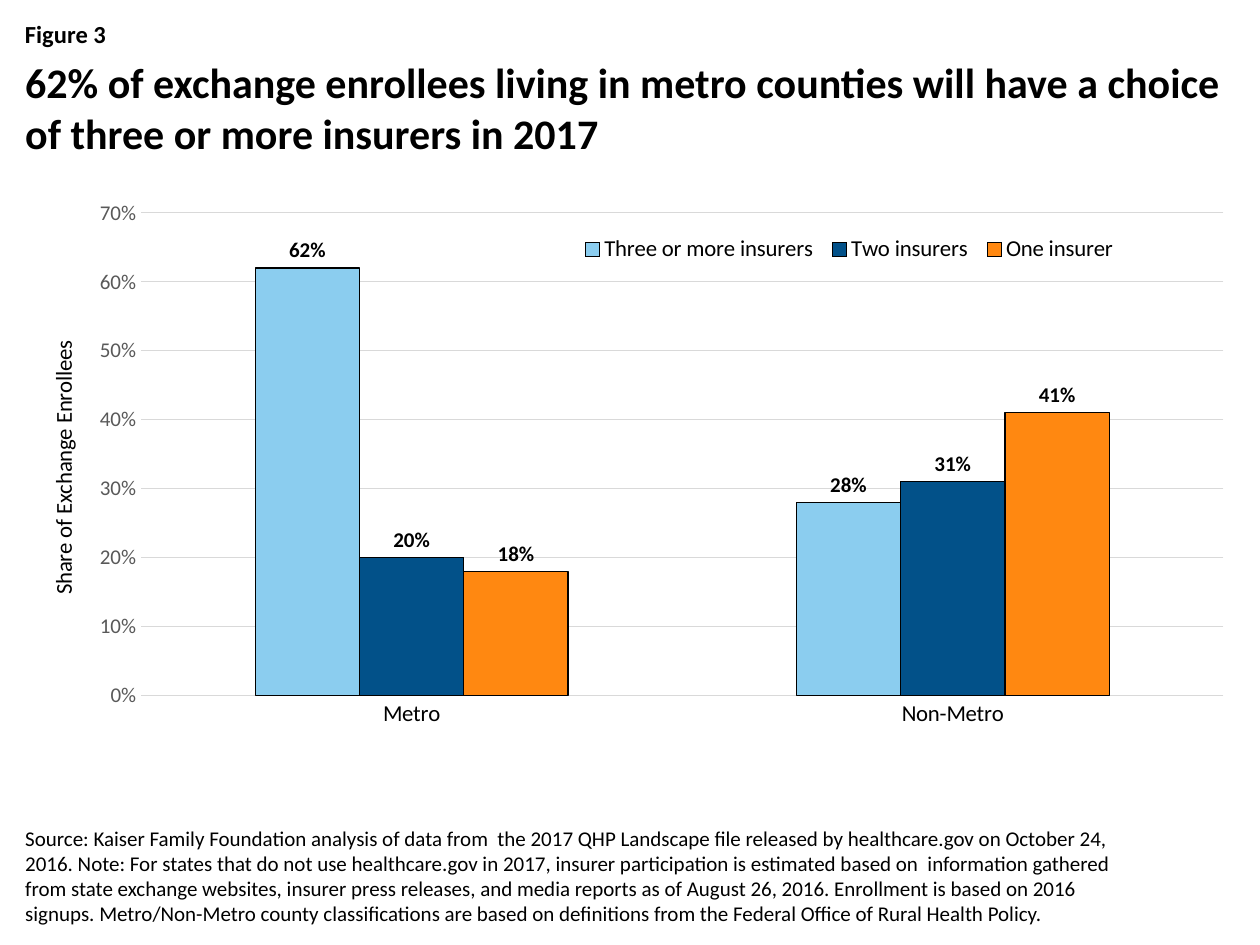
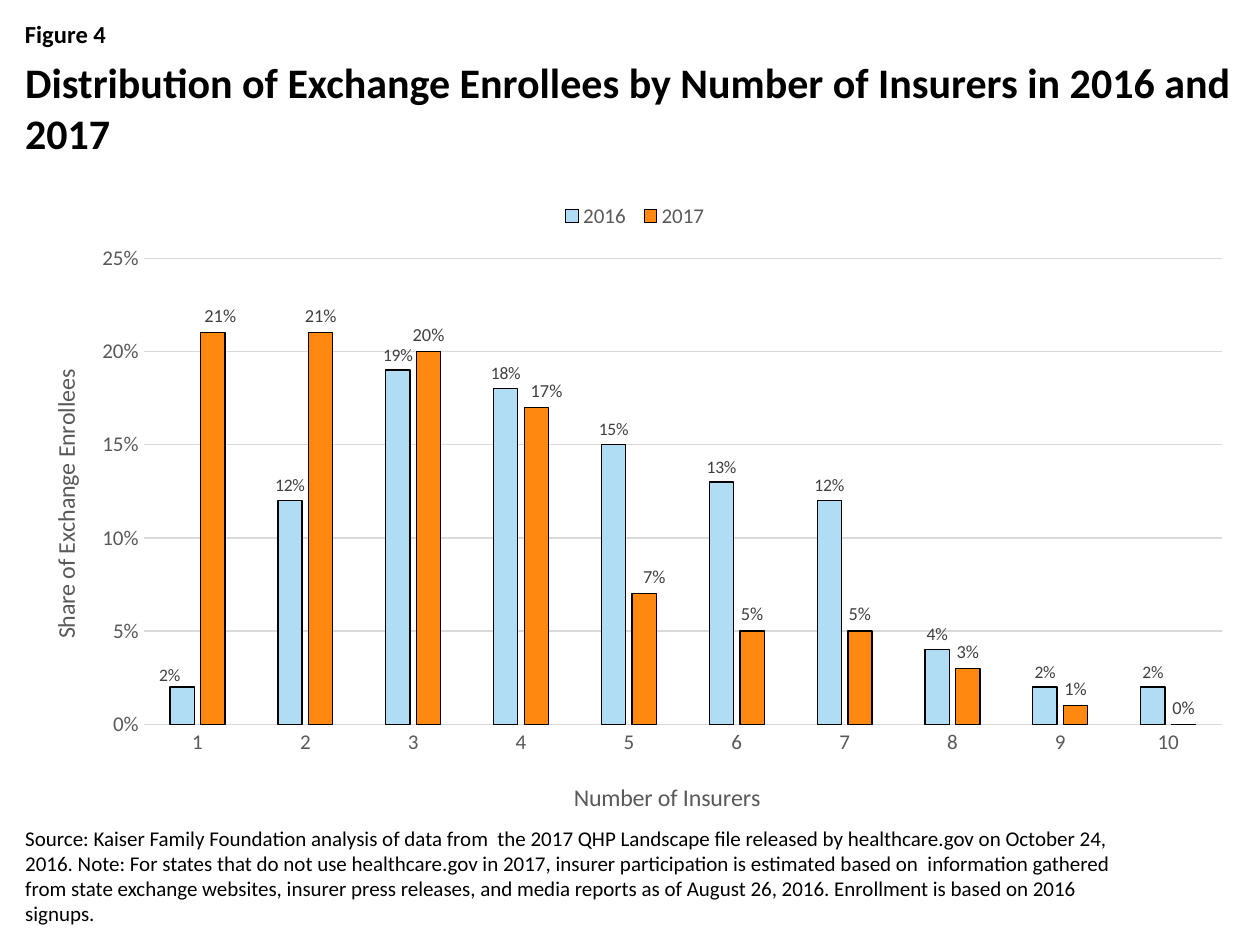
from collections import namedtuple

from lxml.etree import SubElement
from pptx import Presentation
from pptx.chart.data import CategoryChartData
from pptx.dml.color import RGBColor
from pptx.enum.chart import XL_CHART_TYPE, XL_LABEL_POSITION, XL_LEGEND_POSITION, XL_TICK_MARK
from pptx.enum.text import MSO_ANCHOR, MSO_AUTO_SIZE, PP_ALIGN
from pptx.oxml.ns import qn
from pptx.util import Pt

EMU_PER_PX = 9144  # 100 px to the inch
FONT = "Calibri"
BLACK = RGBColor(0x00, 0x00, 0x00)
GRAY = RGBColor(0x59, 0x59, 0x59)
DARK_GRAY = RGBColor(0x40, 0x40, 0x40)
GRID_GRAY = RGBColor(0xD9, 0xD9, 0xD9)
SKY = RGBColor(0x8B, 0xCD, 0xEF)
PALE_SKY = RGBColor(0xB0, 0xDD, 0xF4)
NAVY = RGBColor(0x02, 0x51, 0x89)
ORANGE = RGBColor(0xFF, 0x88, 0x11)

SLIDE_SIZE = (1000, 750)
FIGURE_BOX = (10, 10, 980, 34)
TITLE_BOX = (10, 40, 980, 100)
SOURCE_BOX = (10, 680, 910, 60)

SOURCE = (
    "Source: Kaiser Family Foundation analysis of data from  the 2017 QHP Landscape file "
    "released by healthcare.gov on October 24, 2016. Note: For states that do not use "
    "healthcare.gov in 2017, insurer participation is estimated based on  information "
    "gathered from state exchange websites, insurer press releases, and media reports as of "
    "August 26, 2016. Enrollment is based on 2016 signups."
)
METRO_NOTE = (
    " Metro/Non-Metro county classifications are based on definitions from the Federal "
    "Office of Rural Health Policy."
)

# label_shifts maps a point's index to the (x, y) offset of its label in px
Series = namedtuple("Series", "name values color label_size label_color label_bold label_shifts")
AxisTitle = namedtuple("AxisTitle", "text left top size color")


def px(length):
    return round(length * EMU_PER_PX)


def place(shape, box):
    shape.left, shape.top, shape.width, shape.height = map(px, box)


def style_font(font, size, color, bold=False):
    font.name = FONT
    font.size = Pt(size)
    font.bold = bold
    font.color.rgb = color


def fill_text(shape, box, text, size, bold=False, anchor=MSO_ANCHOR.TOP):
    place(shape, box)
    frame = shape.text_frame
    frame.word_wrap = True
    frame.auto_size = MSO_AUTO_SIZE.NONE
    frame.vertical_anchor = anchor
    frame.text = text
    paragraph = frame.paragraphs[0]
    paragraph.alignment = PP_ALIGN.LEFT
    paragraph.space_before = Pt(0)
    properties = paragraph._p.get_or_add_pPr()
    properties.set("marL", "0")
    properties.set("indent", "0")
    SubElement(properties, qn("a:buNone"))
    style_font(paragraph.font, size, BLACK, bold)


def set_layout(element, chart_size, box, inner=False, offset=False):
    """Fix a chart part at box, in px from the chart's corner (or from its usual place)."""
    for old in element.findall(qn("c:layout")):
        element.remove(old)
    leading = {qn(tag) for tag in ("c:idx", "c:legendPos", "c:legendEntry", "c:tx")}
    layout = element.makeelement(qn("c:layout"))
    element.insert(sum(child.tag in leading for child in element), layout)
    manual = SubElement(layout, qn("c:manualLayout"))
    if inner:
        SubElement(manual, qn("c:layoutTarget")).set("val", "inner")
    if not offset:
        for mode in ("c:xMode", "c:yMode"):
            SubElement(manual, qn(mode)).set("val", "edge")
    for tag, length, whole in zip("xywh", box, chart_size * 2):
        SubElement(manual, qn("c:" + tag)).set("val", f"{length / whole:.4f}")


def style_axis(axis, chart_size, title, size, color):
    axis.major_tick_mark = axis.minor_tick_mark = XL_TICK_MARK.NONE
    style_font(axis.tick_labels.font, size, color)
    axis.has_title = title is not None
    if title:
        axis.axis_title.text_frame.text = title.text
        style_font(axis.axis_title.text_frame.paragraphs[0].font, title.size, title.color)
        set_layout(axis.axis_title._element, chart_size, (title.left, title.top))


def style_line(line, color):
    line.color.rgb = color
    line.width = Pt(0.75)


def style_series(drawn, series, chart_size):
    drawn.format.fill.solid()
    drawn.format.fill.fore_color.rgb = series.color
    style_line(drawn.format.line, BLACK)
    labels = drawn.data_labels
    labels.show_value = True
    labels.number_format = "0%"
    labels.number_format_is_linked = False
    labels.position = XL_LABEL_POSITION.OUTSIDE_END
    label_style = (series.label_size, series.label_color, series.label_bold)
    style_font(labels.font, *label_style)
    for index, shift in series.label_shifts.items():
        label = drawn.points[index].data_label
        label.position = XL_LABEL_POSITION.OUTSIDE_END
        style_font(label.font, *label_style)
        set_layout(label._dLbl, chart_size, shift, offset=True)


def add_column_chart(slide, box, categories, series_list, plot_box, legend_box, legend_style,
                     legend_position, value_title, category_title, category_style,
                     maximum, step, overlap):
    data = CategoryChartData(number_format="0%")
    data.categories = categories
    for series in series_list:
        data.add_series(series.name, series.values)
    chart = slide.shapes.add_chart(
        XL_CHART_TYPE.COLUMN_CLUSTERED, *map(px, box), data).chart
    chart_size = box[2:]
    chart.has_title = False
    style_font(chart.font, 10, BLACK)

    plot = chart.plots[0]
    plot.vary_by_categories = False
    plot.gap_width = 219
    plot.overlap = overlap
    for drawn, series in zip(plot.series, series_list):
        style_series(drawn, series, chart_size)
    set_layout(chart._chartSpace.chart.plotArea, chart_size, plot_box, inner=True)

    chart.has_legend = True
    chart.legend.position = legend_position
    chart.legend.include_in_layout = False
    style_font(chart.legend.font, *legend_style)
    set_layout(chart.legend._element, chart_size, legend_box)

    style_axis(chart.category_axis, chart_size, category_title, *category_style)
    style_line(chart.category_axis.format.line, GRID_GRAY)

    value_axis = chart.value_axis
    style_axis(value_axis, chart_size, value_title, 12, GRAY)
    value_axis.axis_title._element.find(".//" + qn("a:bodyPr")).set("rot", "-5400000")
    value_axis.minimum_scale = 0
    value_axis.maximum_scale = maximum
    value_axis.major_unit = step
    value_axis.tick_labels.number_format = "0%"
    value_axis.tick_labels.number_format_is_linked = False
    value_axis.format.line.fill.background()
    value_axis.has_major_gridlines = True
    style_line(value_axis.major_gridlines.format.line, GRID_GRAY)


def add_figure_slide(presentation, figure, title, source):
    """Add a slide with its figure number, title and source note; return it."""
    slide = presentation.slides.add_slide(presentation.slide_layouts[1])
    fill_text(slide.shapes.title, TITLE_BOX, title, 24, bold=True)
    fill_text(slide.placeholders[1], SOURCE_BOX, source, 12, anchor=MSO_ANCHOR.BOTTOM)
    figure_label = slide.shapes.add_textbox(*map(px, FIGURE_BOX))
    fill_text(figure_label, FIGURE_BOX, figure, 14, bold=True)
    return slide


def add_metro_slide(presentation):
    slide = add_figure_slide(
        presentation, "Figure 3",
        "62% of exchange enrollees living in metro counties will have a choice of three or "
        "more insurers in 2017",
        SOURCE + METRO_NOTE)
    label_style = (12, BLACK, True, {})
    add_column_chart(
        slide, (10, 150, 980, 475), ["Metro", "Non-Metro"],
        [Series("Three or more insurers", (0.62, 0.28), SKY, *label_style),
         Series("Two insurers", (0.20, 0.31), NAVY, *label_style),
         Series("One insurer", (0.18, 0.41), ORANGE, *label_style)],
        plot_box=(102, 19, 859, 383),
        legend_box=(445, 37, 438, 21),
        legend_style=(13, BLACK),
        legend_position=XL_LEGEND_POSITION.BOTTOM,
        value_title=AxisTitle("Share of Exchange Enrollees", 25, 117, 13, BLACK),
        category_title=None,
        category_style=(13, BLACK),
        maximum=0.7, step=0.1, overlap=0)


def add_distribution_slide(presentation):
    slide = add_figure_slide(
        presentation, "Figure 4",
        "Distribution of Exchange Enrollees by Number of Insurers in 2016 and 2017",
        SOURCE)
    add_column_chart(
        slide, (10, 150, 980, 508), [str(count) for count in range(1, 11)],
        [Series("2016", (0.02, 0.12, 0.19, 0.18, 0.15, 0.13, 0.12, 0.04, 0.02, 0.02),
                PALE_SKY, 10, DARK_GRAY, False, {0: (-10, 3)}),
         Series("2017", (0.21, 0.21, 0.20, 0.17, 0.07, 0.05, 0.05, 0.03, 0.01, 0),
                ORANGE, 10.5, DARK_GRAY, False, {0: (6, 0), 3: (8, 0), 4: (8, 0)})],
        plot_box=(104, 55, 856, 370),
        legend_box=(430, 11, 128, 21),
        legend_style=(12, GRAY),
        legend_position=XL_LEGEND_POSITION.TOP,
        value_title=AxisTitle("Share of Exchange Enrollees", 26, 140, 13.7, GRAY),
        category_title=AxisTitle("Number of Insurers", 442, 467, 13.7, GRAY),
        category_style=(12, GRAY),
        maximum=0.25, step=0.05, overlap=-27)


def main():
    presentation = Presentation()
    presentation.slide_width, presentation.slide_height = map(px, SLIDE_SIZE)
    add_metro_slide(presentation)
    add_distribution_slide(presentation)
    presentation.save("out.pptx")


if __name__ == "__main__":
    main()
